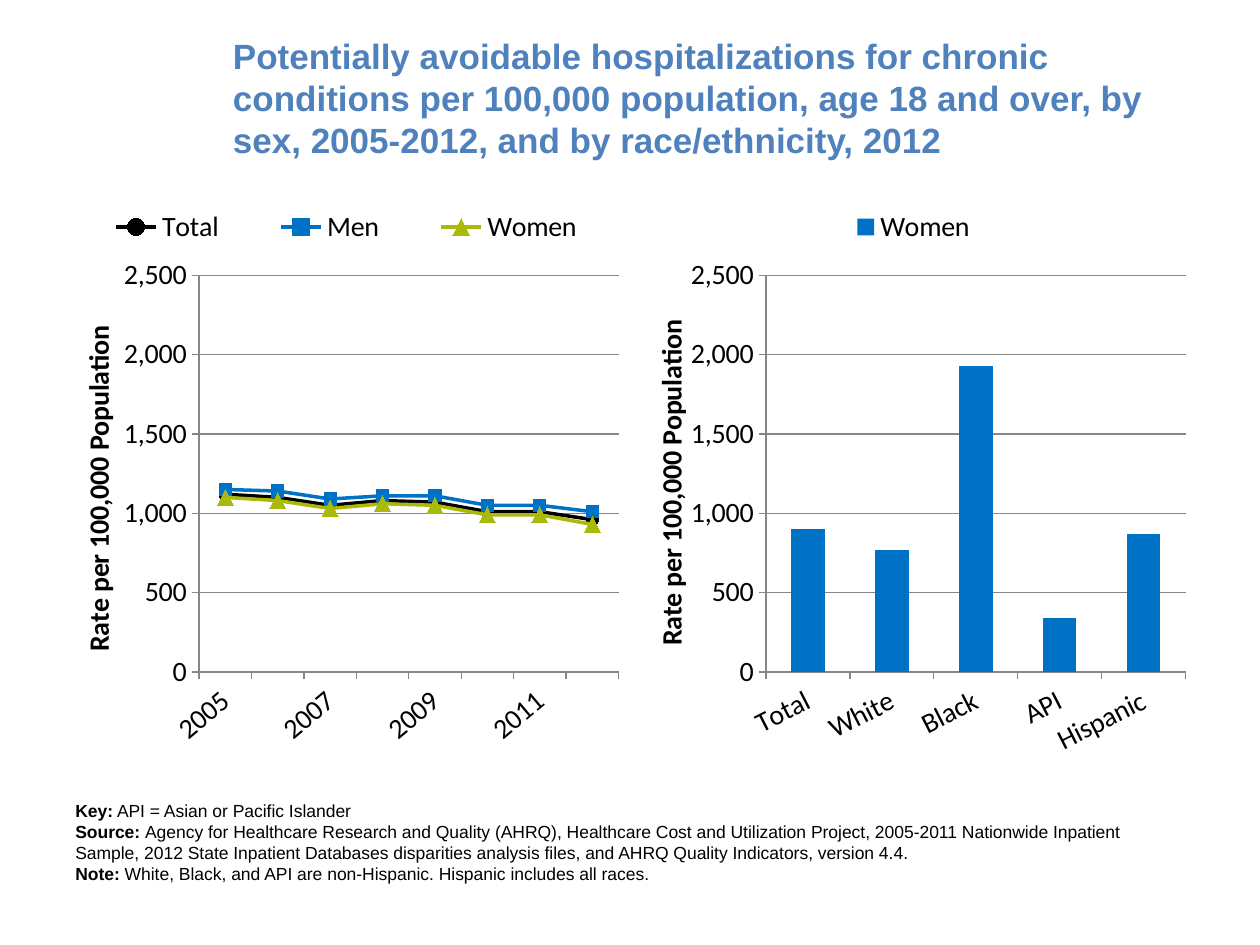
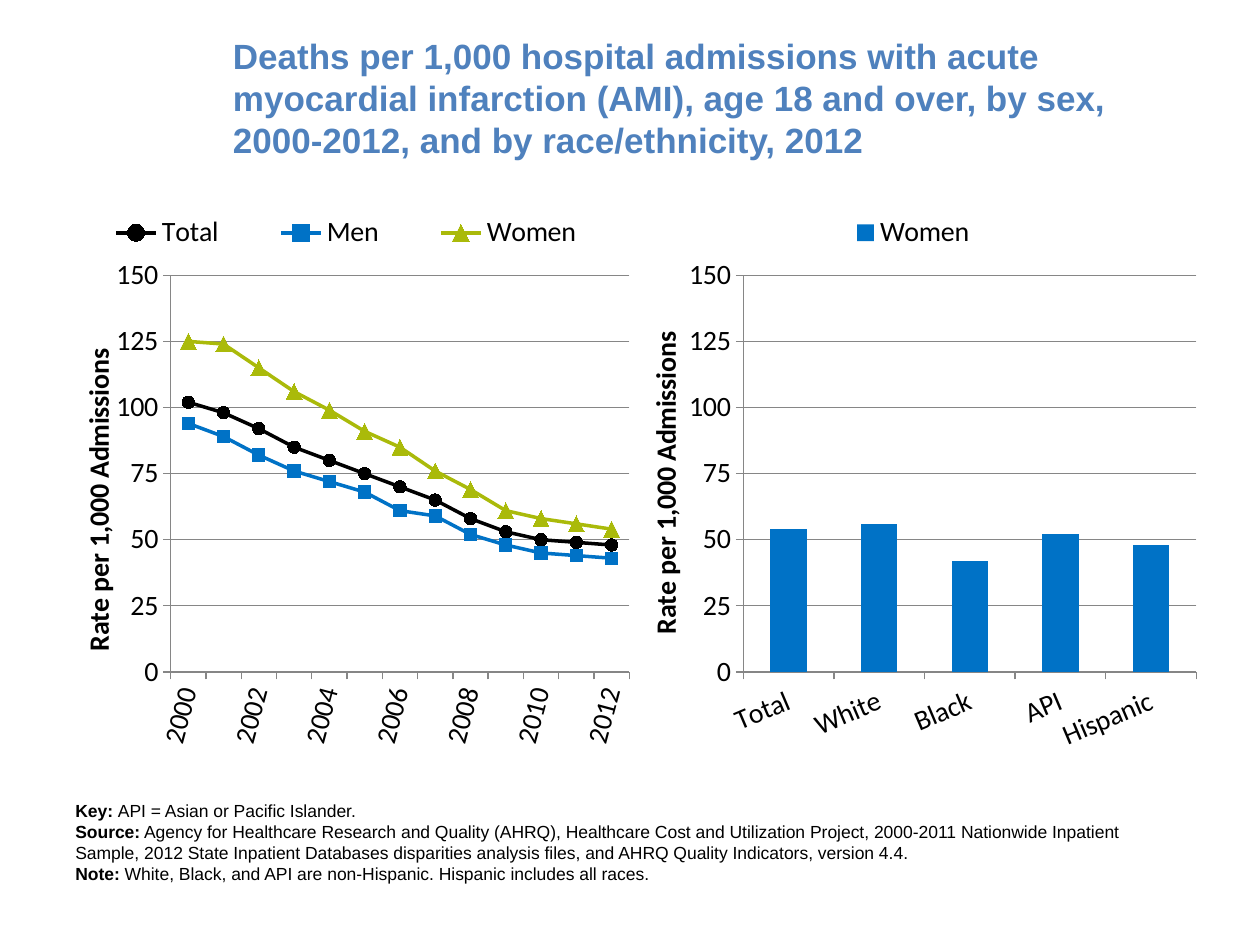
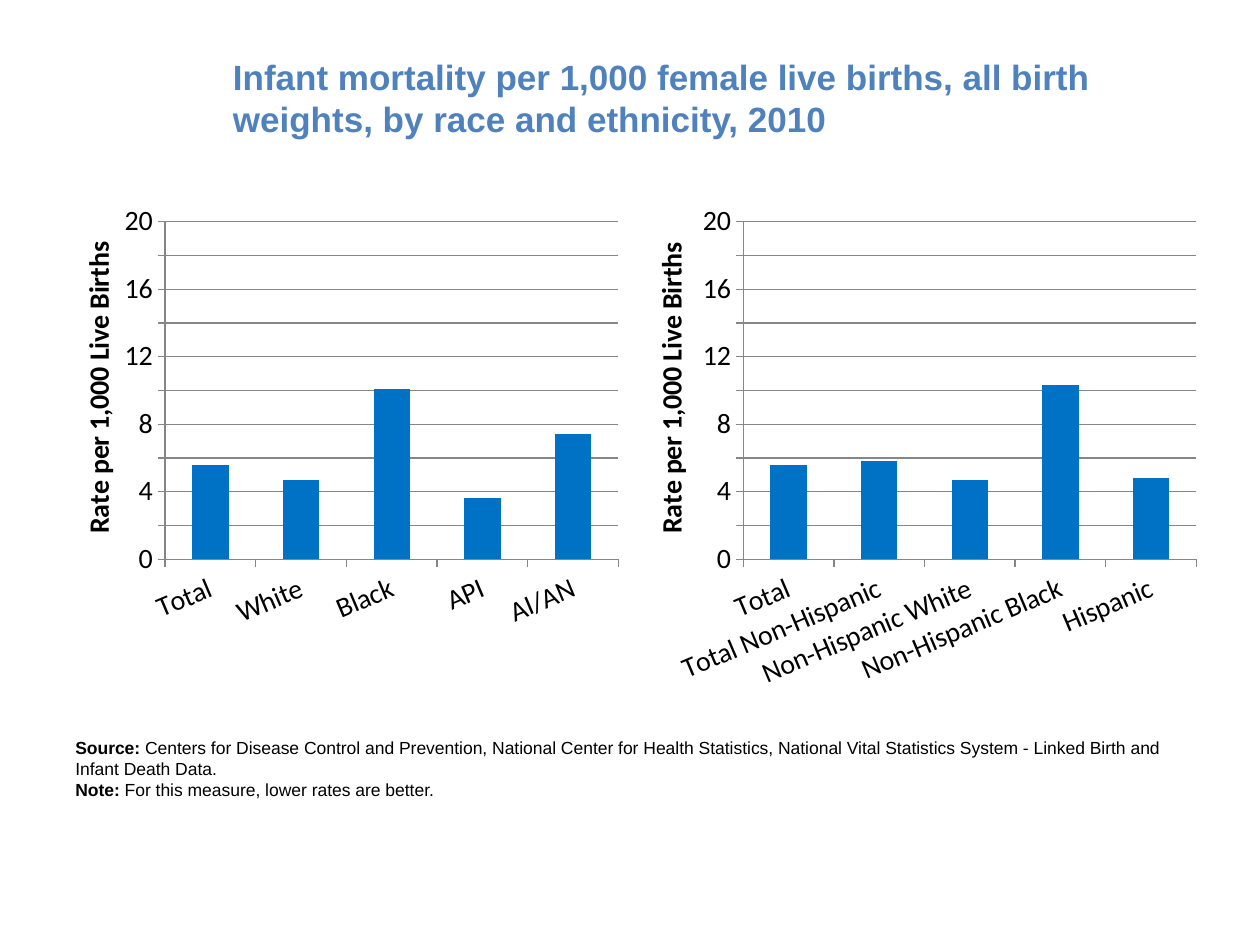
from pptx import Presentation
from pptx.chart.data import CategoryChartData as Data
from pptx.dml.color import RGBColor as RGB
from pptx.enum.chart import XL_CHART_TYPE as Kind
from pptx.enum.chart import XL_LEGEND_POSITION as Legend
from pptx.enum.chart import XL_MARKER_STYLE as Mark
from pptx.enum.chart import XL_TICK_MARK as Tick
from pptx.enum.text import MSO_ANCHOR as Anchor
from pptx.oxml import parse_xml
from pptx.oxml.ns import nsdecls
from pptx.util import Inches, Pt

COLORS = {"title": "4F81BD", "text": "000000", "total": "000000",
          "blue": "0072C6", "green": "AABA0A", "grid": "868686"}
MARKS = [("total", Mark.CIRCLE, 7), ("blue", Mark.SQUARE, 7),
         ("green", Mark.TRIANGLE, 9)]
RACES = ["Total", "White", "Black", "API", "Hispanic"]
RACE_NOTE = ("Note: ", "White, Black, and API are non-Hispanic. "
             "Hispanic includes all races.")
HCUP = ("Agency for Healthcare Research and Quality (AHRQ), Healthcare Cost "
        "and Utilization Project, {}-2011 Nationwide Inpatient Sample, 2012 "
        "State Inpatient Databases disparities analysis files, and AHRQ "
        "Quality Indicators, version 4.4.")


def style(font, size, color, name="Calibri", bold=False):
    font.size, font.name, font.bold = Pt(size), name, bold
    font.color.rgb = RGB.from_string(COLORS[color])


def add_text(slide, box, paras, size, color, anchor=Anchor.TOP):
    """Each paragraph is a bold lead followed by plain text."""
    frame = slide.shapes.add_textbox(*map(Inches, box)).text_frame
    frame.word_wrap = True
    frame.vertical_anchor = anchor
    for i, (lead, rest) in enumerate(paras):
        para = frame.add_paragraph() if i else frame.paragraphs[0]
        for text, bold in ((lead, True), (rest, False)):
            if text:
                run = para.add_run()
                run.text = text
                style(run.font, size, color, "Arial", bold)


# Each chart: categories, series, inner plot area as x, y, width, height,
# axis title as x, y, and the upward tilt of the category labels in degrees
slides = [
    {"title": "Potentially avoidable hospitalizations for chronic conditions "
              "per 100,000 population, age 18 and over, by sex, 2005-2012, "
              "and by race/ethnicity, 2012",
     "axis": "Rate per 100,000 Population", "format": "#,##0",
     "top": 2500, "step": 500, "height": 4.5, "legend": (0, 0, 1, 0.09),
     "charts": [
         (range(2005, 2013),
          {"Total": [1120, 1100, 1050, 1080, 1070, 1010, 1010, 960],
           "Men": [1150, 1140, 1090, 1110, 1110, 1050, 1050, 1010],
           "Women": [1100, 1080, 1030, 1060, 1050, 990, 990, 930]},
          (0.24, 0.13, 0.74, 0.7), (0.02, 0.21), 40),
         (RACES, {"Women": [900, 770, 1930, 340, 870]},
          (0.24, 0.13, 0.74, 0.7), (0.03, 0.2), 27)],
     "notes": [("Key:", " API = Asian or Pacific Islander"),
               ("Source: ", HCUP.format(2005)), RACE_NOTE]},
    {"title": "Deaths per 1,000 hospital admissions with acute myocardial "
              "infarction (AMI), age 18 and over, by sex, 2000-2012, and by "
              "race/ethnicity, 2012",
     "axis": "Rate per 1,000 Admissions", "format": "0",
     "top": 150, "step": 25, "height": 4.5, "legend": (0, 0.01, 1, 0.09),
     "charts": [
         (range(2000, 2013),
          {"Total": [102, 98, 92, 85, 80, 75, 70, 65, 58, 53, 50, 49, 48],
           "Men": [94, 89, 82, 76, 72, 68, 61, 59, 52, 48, 45, 44, 43],
           "Women": [125, 124, 115, 106, 99, 91, 85, 76, 69, 61, 58, 56, 54]},
          (0.19, 0.13, 0.81, 0.7), (0.02, 0.25), 75),
         (RACES, {"Women": [54, 56, 42, 52, 48]},
          (0.2, 0.13, 0.8, 0.7), (0.02, 0.22), 23)],
     "notes": [("Key: ", "API = Asian or Pacific Islander."),
               ("Source:", " " + HCUP.format(2000)), RACE_NOTE]},
    {"title": "Infant mortality per 1,000 female live births, all birth "
              "weights, by race and ethnicity, 2010",
     "axis": "Rate per 1,000 Live Births", "format": "0",
     "top": 20, "step": 2, "height": 4,
     "charts": [
         (["Total", "White", "Black", "API", "AI/AN"],
          {"Series 1": [5.6, 4.7, 10.1, 3.6, 7.4]},
          (0.18, 0.04, 0.8, 0.67), (0.02, 0.07), 23),
         (["Total", "Total Non-Hispanic", "Non-Hispanic White",
           "Non-Hispanic Black", "Hispanic"],
          {"Series 1": [5.6, 5.8, 4.7, 10.3, 4.8]},
          (0.2, 0.04, 0.8, 0.67), (0.03, 0.07), 23)],
     "notes": [("Source: ", "Centers for Disease Control and Prevention, "
                "National Center for Health Statistics, National Vital "
                "Statistics System - Linked Birth and Infant Death Data."),
               ("Note: ", "For this measure, lower rates are better.")]},
]

prs = Presentation()
prs.slide_width, prs.slide_height = Inches(10), Inches(7.5)

for page in slides:
    slide = prs.slides.add_slide(prs.slide_layouts[6])
    add_text(slide, (1.75, 0.3, 7.75, 0.95), [(page["title"], "")], 20,
             "title", Anchor.MIDDLE)

    for col, (cats, series, plot_box, name_at, tilt) in enumerate(
            page["charts"]):
        data = Data(number_format="General")
        data.categories = [str(cat) for cat in cats]
        for name, vals in series.items():
            data.add_series(name, vals)
        lines = len(series) > 1
        kind = Kind.LINE_MARKERS if lines else Kind.COLUMN_CLUSTERED
        box = (0.5 + 4.5 * col, 1.6, 4.5, page["height"])
        chart = slide.shapes.add_chart(kind, *map(Inches, box), data).chart
        chart.has_title = False
        style(chart.font, 10, "text", "Arial")

        chart.has_legend = "legend" in page
        if chart.has_legend:
            chart.legend.position = Legend.TOP
            chart.legend.include_in_layout = False
            style(chart.legend.font, 16, "text")

        for axis in (chart.category_axis, chart.value_axis):
            axis.major_tick_mark = Tick.OUTSIDE
            axis.minor_tick_mark = Tick.NONE
            axis.format.line.color.rgb = RGB.from_string(COLORS["grid"])
            style(axis.tick_labels.font, 16, "text")
        axis.minimum_scale, axis.maximum_scale = 0, page["top"]
        axis.major_unit = page["step"]
        axis.tick_labels.number_format = page["format"]
        axis.tick_labels.number_format_is_linked = False
        grid = axis.major_gridlines.format.line
        grid.color.rgb = RGB.from_string(COLORS["grid"])
        run = axis.axis_title.text_frame.paragraphs[0].add_run()
        run.text = page["axis"]
        style(run.font, 16, "text", bold=True)

        plot = chart.plots[0]
        plot.vary_by_categories = False
        if not lines:
            plot.gap_width = 150
            fill = plot.series[0].format.fill
            fill.solid()
            fill.fore_color.rgb = RGB.from_string(COLORS["blue"])
        else:
            for line, (color, mark, size) in zip(plot.series, MARKS):
                rgb = RGB.from_string(COLORS[color])
                line.smooth = False
                line.format.line.width = Pt(2)
                line.format.line.color.rgb = rgb
                line.marker.style, line.marker.size = mark, size
                line.marker.format.fill.solid()
                line.marker.format.fill.fore_color.rgb = rgb
                line.marker.format.line.color.rgb = rgb

        area = chart.element.chart.plotArea
        body = area.xpath("c:catAx/c:txPr/a:bodyPr")[0]
        body.set("rot", str(-60000 * tilt))
        body.set("vert", "horz")

        # Fixed places for the plot area, the axis title and the legend
        parts = [(area, 0, plot_box),
                 (area.xpath("c:valAx/c:title")[0], 1, name_at)]
        for legend in chart.element.xpath("c:chart/c:legend"):
            parts.append((legend, 1, page["legend"]))
        for part, pos, place in parts:
            for old in part.xpath("c:layout"):
                part.remove(old)
            inner = '<c:layoutTarget val="inner"/>' if part is area else ""
            spots = "".join(f'<c:{tag} val="{val}"/>'
                            for tag, val in zip("xywh", place))
            part.insert(pos, parse_xml(
                f'<c:layout {nsdecls("c")}><c:manualLayout>{inner}'
                '<c:xMode val="edge"/><c:yMode val="edge"/>'
                f'{spots}</c:manualLayout></c:layout>'))

    add_text(slide, (0.5, 1.8 + page["height"], 9, 0.77), page["notes"], 10,
             "text")

prs.save("out.pptx")
